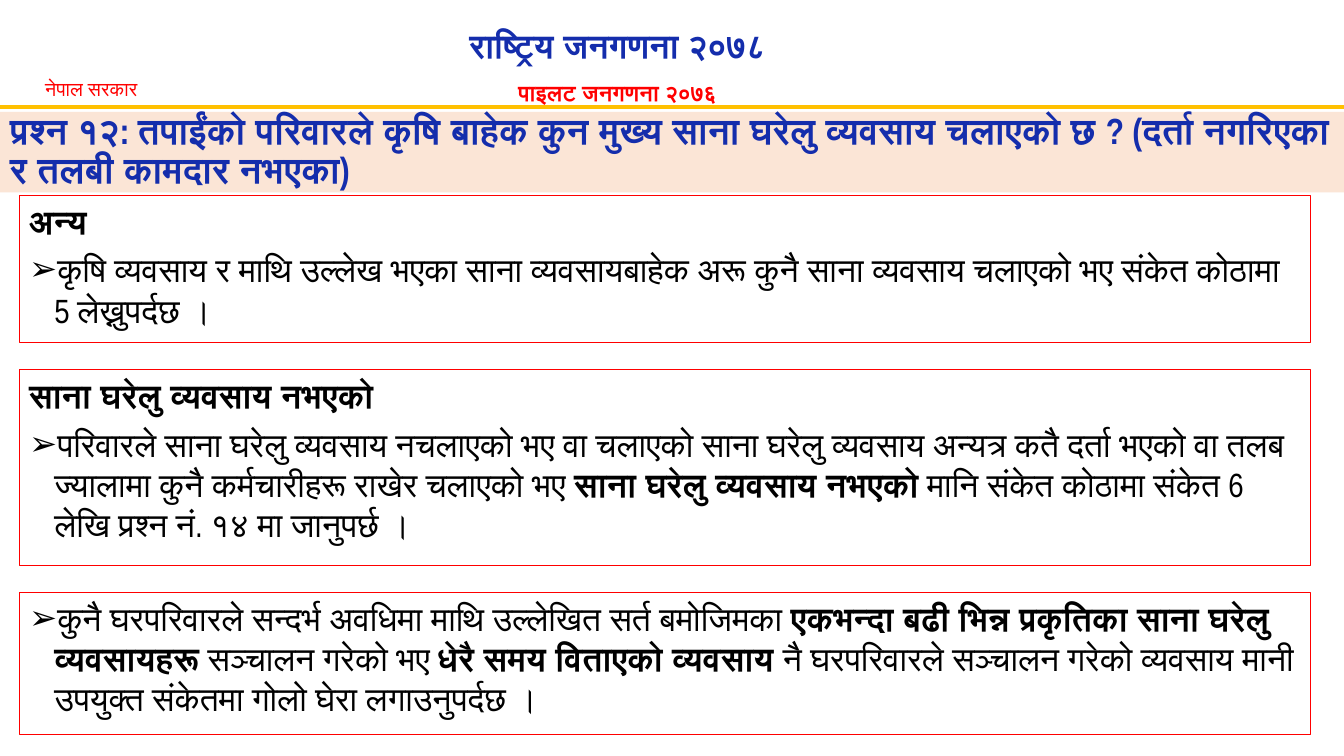
from dataclasses import dataclass
from typing import Any, Optional

from lxml import etree
from pptx import Presentation
from pptx import util as u
from pptx.dml import color
from pptx.enum import shapes, text
from pptx.oxml import ns

WIDTH, HEIGHT = 960, 540
BLUE, RED, BLACK, GOLD, PEACH = "142DAC", "FF0000", "000000", "FFC000", "FBE5D6"
BULLET, INDENT = "➢", 18


@dataclass
class Run:
    words: str
    bold: bool = False
    size: float = 24
    colour: str = BLACK
    font: str = "Arial Narrow"


@dataclass
class Line:
    """One paragraph; its pieces are runs, with "\n" for a line break."""
    pieces: list
    bulleted: bool = False
    after: float = 0
    spacing: float = 1.0
    align: Any = text.PP_ALIGN.LEFT


@dataclass
class Box:
    left: float
    top: float
    width: float
    height: float
    lines: list
    fill: Optional[str] = None
    outline: Optional[str] = None
    anchor: Any = text.MSO_ANCHOR.TOP


def rgb(value: str) -> color.RGBColor:
    return color.RGBColor.from_string(value)


def apply(target: Any, values: dict) -> None:
    for name, value in values.items():
        setattr(target, name, value)


def add_bullet(paragraph: Any) -> None:
    properties = paragraph._p.get_or_add_pPr()
    properties.set("marL", str(u.Pt(INDENT)))
    properties.set("indent", str(-u.Pt(INDENT)))
    etree.SubElement(properties, ns.qn("a:buFont")).set("typeface", "Arial")
    etree.SubElement(properties, ns.qn("a:buChar")).set("char", BULLET)


def write_lines(frame: Any, lines: list) -> None:
    for index, line in enumerate(lines):
        paragraph = frame.add_paragraph() if index else frame.paragraphs[0]
        if line.bulleted:
            add_bullet(paragraph)
        apply(paragraph, {"alignment": line.align, "line_spacing": line.spacing,
                          "space_after": u.Pt(line.after)})
        for piece in line.pieces:
            if piece == "\n":
                paragraph.add_line_break()
                continue
            run = paragraph.add_run()
            run.text = piece.words
            apply(run.font, {"name": piece.font, "size": u.Pt(piece.size), "bold": piece.bold})
            run.font.color.rgb = rgb(piece.colour)


def draw_label(slide: Any, box: Box) -> None:
    shape = slide.shapes.add_textbox(*map(u.Pt, (box.left, box.top, box.width, box.height)))
    apply(shape.text_frame, {"word_wrap": False,
                             "auto_size": text.MSO_AUTO_SIZE.SHAPE_TO_FIT_TEXT})
    write_lines(shape.text_frame, box.lines)


def draw_panel(slide: Any, box: Box) -> None:
    shape = slide.shapes.add_shape(shapes.MSO_SHAPE.RECTANGLE,
                                   *map(u.Pt, (box.left, box.top, box.width, box.height)))
    shape.shadow.inherit = False
    if box.fill:
        shape.fill.solid()
        shape.fill.fore_color.rgb = rgb(box.fill)
    else:
        shape.fill.background()
    if box.outline:
        shape.line.color.rgb = rgb(box.outline)
        shape.line.width = u.Pt(0.75)
    else:
        shape.line.fill.background()
    apply(shape.text_frame, {"word_wrap": True, "vertical_anchor": box.anchor})
    write_lines(shape.text_frame, box.lines)


def draw_rule(slide: Any, top: float) -> None:
    rule = slide.shapes.add_connector(shapes.MSO_CONNECTOR.STRAIGHT,
                                      *map(u.Pt, (0, top, WIDTH, top)))
    rule.line.color.rgb = rgb(GOLD)
    rule.line.width = u.Pt(3)
    etree.SubElement(rule._element.spPr, ns.qn("a:effectLst"))


def heading(words: str) -> Line:
    return Line([Run(words, bold=True)], after=6)


def point(*pieces: Run) -> Line:
    return Line(list(pieces), bulleted=True, after=6)


def answer_box(top: float, height: float, *lines: Line) -> Box:
    return Box(13.7, top, 922.3, height, list(lines), outline=RED)


LABELS = [
    Box(25.2, 51.1, 92.2, 24.5, [Line([Run("नेपाल सरकार", size=14, colour=RED)])]),
    Box(316.1, 0, 249.8, 77.8, [Line(
        [Run("राष्ट्रिय जनगणना २०७८", True, 24, BLUE, "Roboto"), "\n",
         Run("पाइलट जनगणना २०७६", True, 16, RED, "Times New Roman")],
        spacing=1.5, align=text.PP_ALIGN.CENTER)]),
]

QUESTION = Box(0, 79.9, WIDTH, 57.6, [Line(
    [Run("प्रश्न १२: तपाईंको परिवारले कृषि बाहेक कुन मुख्य साना घरेलु व्यवसाय चलाएको छ ? "
         "(दर्ता नगरिएका र तलबी कामदार नभएका)", True, 26, BLUE)], spacing=0.9)],
    fill=PEACH, anchor=text.MSO_ANCHOR.MIDDLE)

ANSWERS = [
    answer_box(
        139.7, 105.1,
        heading("अन्य"),
        point(Run("कृषि व्यवसाय र माथि उल्लेख भएका साना व्यवसायबाहेक अरू कुनै साना व्यवसाय "
                  "चलाएको भए संकेत कोठामा 5 लेख्नुपर्दछ ।"))),
    answer_box(
        264.2, 139.7,
        heading("साना घरेलु व्यवसाय नभएको"),
        point(Run("परिवारले साना घरेलु व्यवसाय नचलाएको भए वा चलाएको साना घरेलु व्यवसाय अन्यत्र "
                  "कतै दर्ता भएको वा तलब ज्यालामा कुनै कर्मचारीहरू राखेर चलाएको भए "),
              Run("साना घरेलु व्यवसाय नभएको", bold=True),
              Run(" मानि संकेत कोठामा संकेत 6 लेखि प्रश्न नं. १४ मा जानुपर्छ ।"))),
    answer_box(
        423.4, 101.5,
        point(Run("कुनै घरपरिवारले सन्दर्भ अवधिमा माथि उल्लेखित सर्त बमोजिमका "),
              Run("एकभन्दा बढी भिन्न प्रकृतिका साना घरेलु व्यवसायहरू", bold=True),
              Run(" सञ्चालन गरेको भए "),
              Run("धेरै समय विताएको व्यवसाय ", bold=True),
              Run("नै घरपरिवारले सञ्चालन गरेको व्यवसाय मानी उपयुक्त संकेतमा गोलो घेरा "
                  "लगाउनुपर्दछ ।"))),
]


def main() -> None:
    presentation = Presentation()
    apply(presentation, {"slide_width": u.Pt(WIDTH), "slide_height": u.Pt(HEIGHT)})
    slide = presentation.slides.add_slide(presentation.slide_layouts[6])

    # Header
    for label in LABELS:
        draw_label(slide, label)
    draw_rule(slide, 76.3)

    # Question band and answer boxes
    for panel in [QUESTION, *ANSWERS]:
        draw_panel(slide, panel)

    presentation.save("out.pptx")


if __name__ == "__main__":
    main()
